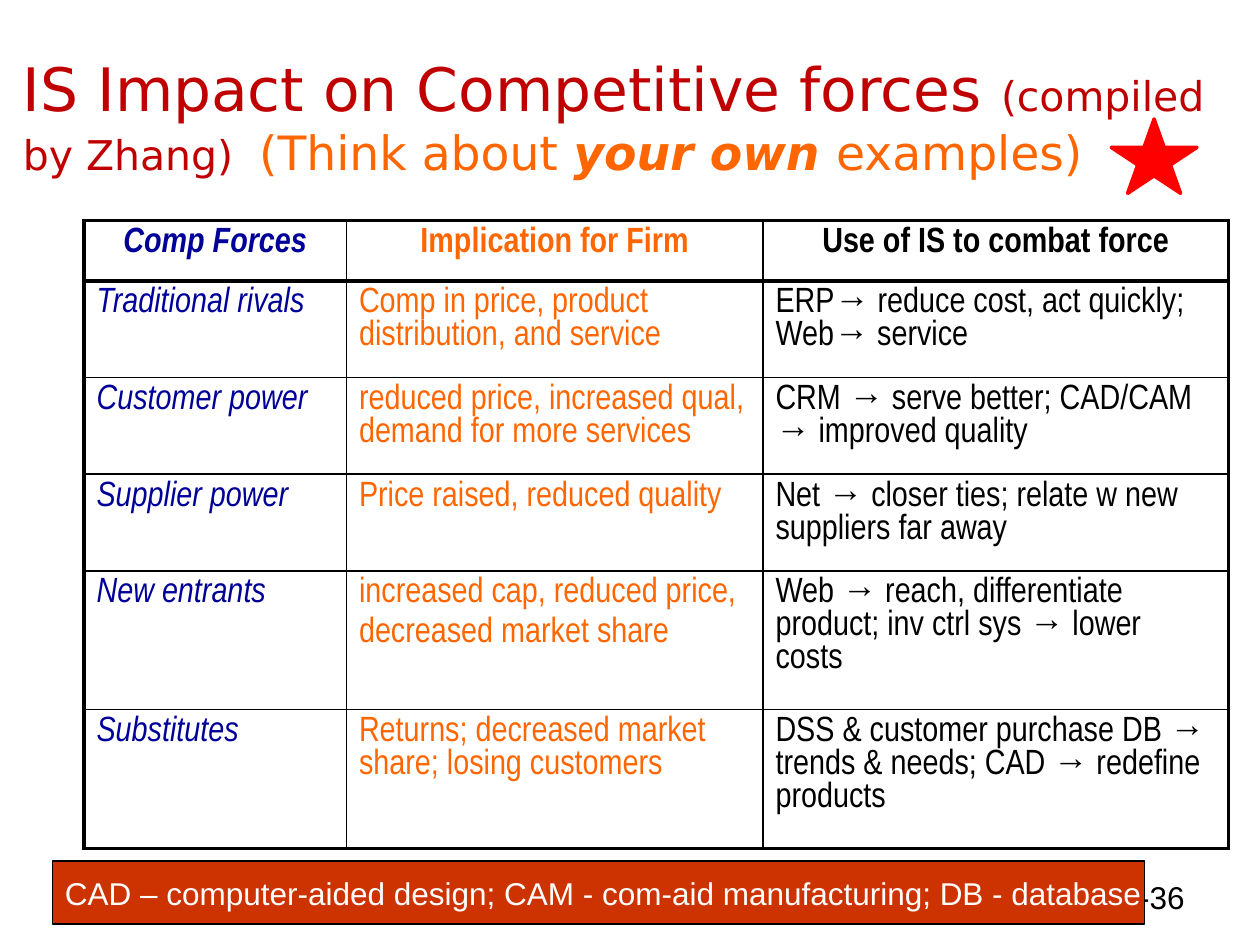
from typing import NamedTuple

from lxml import etree
from pptx import Presentation
from pptx.dml.color import RGBColor
from pptx.enum import shapes, text
from pptx.oxml.ns import qn
from pptx.util import Pt

BLACK = RGBColor(0x00, 0x00, 0x00)
WHITE = RGBColor(0xFF, 0xFF, 0xFF)
NAVY = RGBColor(0x00, 0x00, 0x99)
ORANGE = RGBColor(0xFF, 0x66, 0x00)
CRIMSON = RGBColor(0xC0, 0x00, 0x00)
RUST = RGBColor(0xCC, 0x33, 0x00)
RED = RGBColor(0xFF, 0x00, 0x00)
THICK, THIN = 2.25, 1


class Box(NamedTuple):
    x: float
    y: float
    w: float
    h: float

    def emu(self) -> list:
        return [Pt(v) for v in self]


class TitleRun(NamedTuple):
    words: str
    size: float
    color: RGBColor
    strong: bool = False


class Column(NamedTuple):
    width: float
    color: RGBColor
    italic: bool


class Row(NamedTuple):
    height: float
    cells: tuple


TITLE = [
    TitleRun("IS Impact on Competitive forces ", 34.2, CRIMSON),
    TitleRun("(compiled by Zhang)  ", 23.4, CRIMSON),
    TitleRun("(Think about ", 27, ORANGE),
    TitleRun("your own ", 27, ORANGE, True),
    TitleRun("examples)", 27, ORANGE),
]
COLUMNS = [Column(150, NAVY, True), Column(238, ORANGE, False), Column(266, BLACK, False)]
ROWS = [
    Row(34.5, ("Comp Forces", "Implication for Firm", "Use of IS to combat force")),
    Row(55.2, ("Traditional rivals", "Comp in price, product distribution, and service",
               "ERP→ reduce cost, act quickly; Web→ service")),
    Row(55.2, ("Customer power", "reduced price, increased qual, demand for more services",
               "CRM → serve better; CAD/CAM → improved quality")),
    Row(55.2, ("Supplier power", "Price raised, reduced quality",
               "Net → closer ties; relate w new suppliers far away")),
    Row(77, ("New entrants", "increased cap, reduced price,\ndecreased market share",
             "Web → reach, differentiate product; inv ctrl sys → lower costs")),
    Row(79.4, ("Substitutes", "Returns; decreased market share; losing customers",
               "DSS & customer purchase DB → trends & needs; CAD → redefine products")),
]


def set_font(font, name: str, size: float, color: RGBColor,
             bold: bool = False, italic: bool = False) -> None:
    font.name, font.size = name, Pt(size)
    font.bold, font.italic = bold, italic
    font.color.rgb = color


def set_borders(cell, widths: dict) -> None:
    tc_pr = cell._tc.get_or_add_tcPr()
    for i, (side, width) in enumerate(widths.items()):
        ln = etree.Element(qn(f"a:ln{side}"), w=str(Pt(width)))
        fill = etree.SubElement(ln, qn("a:solidFill"))
        etree.SubElement(fill, qn("a:srgbClr"), val=str(BLACK))
        tc_pr.insert(i, ln)


def add_title(s, box: Box) -> None:
    tf = s.shapes.add_textbox(*box.emu()).text_frame
    tf.word_wrap = True
    tf.vertical_anchor = text.MSO_ANCHOR.MIDDLE
    p = tf.paragraphs[0]
    for part in TITLE:
        r = p.add_run()
        r.text = part.words
        set_font(r.font, "DejaVu Sans", part.size, part.color, part.strong, part.strong)


def add_page_number(s, box: Box, words: str) -> None:
    tf = s.shapes.add_textbox(*box.emu()).text_frame
    tf.word_wrap = True
    p = tf.paragraphs[0]
    p.text = words
    p.alignment = text.PP_ALIGN.RIGHT
    set_font(p.font, "Arial", 18, BLACK)


def add_forces_table(s, box: Box) -> None:
    table = s.shapes.add_table(len(ROWS), len(COLUMNS), *box.emu()).table
    table.first_row = table.horz_banding = False
    last_row, last_col = len(ROWS) - 1, len(COLUMNS) - 1
    for j, col in enumerate(COLUMNS):
        table.columns[j].width = Pt(col.width)
    for i, row in enumerate(ROWS):
        table.rows[i].height = Pt(row.height)
        for j, (col, words) in enumerate(zip(COLUMNS, row.cells)):
            cell = table.cell(i, j)
            cell.fill.background()
            cell.text = words
            for p in cell.text_frame.paragraphs:
                p.space_before = Pt(4)
                p.alignment = text.PP_ALIGN.CENTER if i == 0 else text.PP_ALIGN.LEFT
                set_font(p.font, "Arial Narrow", 20, col.color, i == 0, col.italic)
            set_borders(cell, {
                "L": THICK if j == 0 else THIN,
                "R": THICK if j == last_col else THIN,
                "T": THICK if i <= 1 else THIN,
                "B": THICK if i in (0, last_row) else THIN,
            })


def add_shape(s, kind, box: Box, fill: RGBColor, line: RGBColor, width: float):
    sp = s.shapes.add_shape(kind, *box.emu())
    sp.shadow.inherit = False
    sp.fill.solid()
    sp.fill.fore_color.rgb = fill
    sp.line.color.rgb = line
    sp.line.width = Pt(width)
    return sp


def add_legend(s, box: Box, words: str) -> None:
    tf = add_shape(s, shapes.MSO_SHAPE.RECTANGLE, box, RUST, BLACK, 0.75).text_frame
    tf.word_wrap = False
    tf.vertical_anchor = text.MSO_ANCHOR.MIDDLE
    p = tf.paragraphs[0]
    p.text = words
    p.alignment = text.PP_ALIGN.LEFT
    set_font(p.font, "Arial", 18, WHITE)


def main() -> None:
    prs = Presentation()
    prs.slide_width, prs.slide_height = Pt(720), Pt(540)
    s = prs.slides.add_slide(prs.slide_layouts[6])
    add_page_number(s, Box(534, 498, 150, 30), "2-36")
    add_title(s, Box(6, 21, 714, 90))
    add_forces_table(s, Box(48, 126, 654, 356.5))
    add_legend(s, Box(30, 492, 624, 36),
               "CAD – computer-aided design; CAM - com-aid manufacturing; DB - database")
    add_shape(s, shapes.MSO_SHAPE.STAR_5_POINT, Box(635, 68, 49, 42.5), RED, RED, 2)
    prs.save("out.pptx")


if __name__ == "__main__":
    main()
